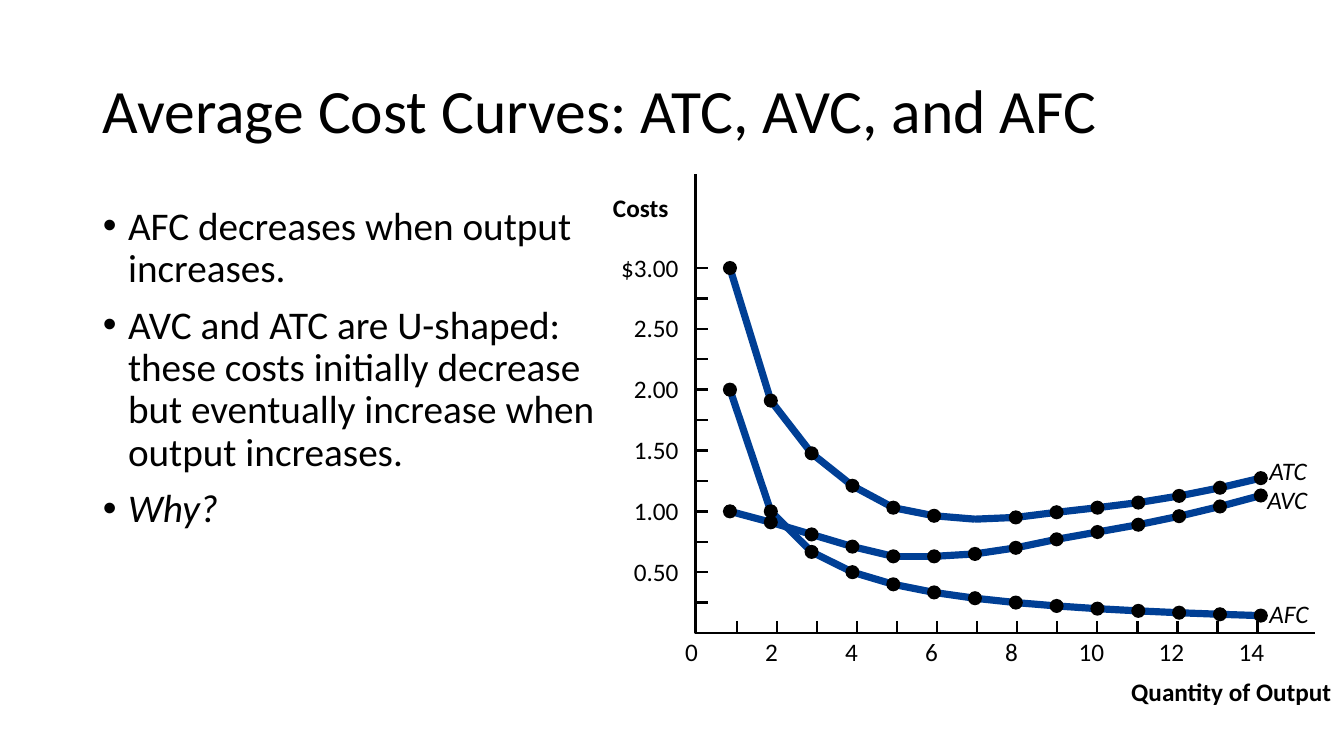
from itertools import pairwise

from lxml import etree
from pptx import Presentation
from pptx.dml.color import RGBColor
from pptx.enum.shapes import MSO_CONNECTOR, MSO_SHAPE
from pptx.enum.text import MSO_ANCHOR, MSO_AUTO_SIZE, PP_ALIGN
from pptx.oxml.ns import qn
from pptx.util import Inches, Pt

STRAIGHT = MSO_CONNECTOR.STRAIGHT
OVAL = MSO_SHAPE.OVAL
MIDDLE, TOP = MSO_ANCHOR.MIDDLE, MSO_ANCHOR.TOP
NO_FIT, GROW = MSO_AUTO_SIZE.NONE, MSO_AUTO_SIZE.SHAPE_TO_FIT_TEXT
LEFT, CENTER, RIGHT = PP_ALIGN.LEFT, PP_ALIGN.CENTER, PP_ALIGN.RIGHT

FONT = "Calibri"
BLACK, BLUE = "000000", "003F95"
TITLE = "Average Cost Curves: ATC, AVC, and AFC"
POINTS = [
    "AFC decreases when output increases.",
    "AVC and ATC are U-shaped: these costs initially decrease "
    "but eventually increase when output increases.",
    "Why?",
]
AFC = [2 / n for n in range(1, 15)]
AVC = [1, 0.91, 0.81, 0.71, 0.63, 0.63, 0.65, 0.7, 0.77, 0.83, 0.89, 0.96, 1.04, 1.13]
ATC = [fixed + varied for fixed, varied in zip(AFC, AVC)]


def color(code):
    """Turn a hex string into a colour."""
    return RGBColor.from_string(code)


def style(para, size, bold=False, italic=False):
    """Format every run of a paragraph."""
    for run in para.runs:
        font = run.font
        font.name, font.size = FONT, Pt(size)
        font.bold, font.italic = bold, italic
        font.color.rgb = color(BLACK)


def place(shape, box):
    """Move a shape to a box given in inches."""
    shape.left, shape.top, shape.width, shape.height = map(Inches, box)


def line(shapes, start, end, code=BLACK, width=1.75):
    """Draw a straight line without a shadow."""
    stroke = shapes.add_connector(STRAIGHT, *map(Inches, (*start, *end)))
    stroke.line.color.rgb = color(code)
    stroke.line.width = Pt(width)
    etree.SubElement(stroke._element.spPr, qn("a:effectLst"))


def dot(shapes, x, y, size=0.14):
    """Draw a black dot centred on a point."""
    mark = shapes.add_shape(OVAL, *map(Inches, (x - size / 2, y - size / 2, size, size)))
    mark.shadow.inherit = False
    mark.fill.solid()
    mark.fill.fore_color.rgb = color(BLACK)
    mark.line.fill.background()


def label(slide, text, x, y, width, align=LEFT, bold=False, italic=False):
    """Write one line of text in a box that grows with it."""
    frame = slide.shapes.add_textbox(*map(Inches, (x, y, width, 0.3))).text_frame
    frame.margin_left = frame.margin_right = frame.margin_top = frame.margin_bottom = 0
    frame.word_wrap = False
    frame.auto_size = GROW
    frame.text = text
    para = frame.paragraphs[0]
    para.alignment = align
    style(para, 18, bold, italic)


def head(slide, box):
    """Fill the title."""
    title = slide.shapes.title
    place(title, box)
    frame = title.text_frame
    frame.text = TITLE
    frame.auto_size = NO_FIT
    frame.vertical_anchor = MIDDLE
    para = frame.paragraphs[0]
    para.alignment, para.line_spacing = LEFT, 0.9
    style(para, 44)


def notes(slide, box):
    """Fill the bullet list."""
    body = slide.placeholders[1]
    place(body, box)
    frame = body.text_frame
    frame.text = "\n".join(POINTS)
    frame.auto_size = NO_FIT
    frame.vertical_anchor = TOP
    for para in frame.paragraphs:
        para.line_spacing, para.space_before = 0.9, Pt(10)
        props = para._p.get_or_add_pPr()
        props.set("marL", str(Inches(0.25)))
        props.set("indent", str(-Inches(0.25)))
        style(para, 28, italic=para.text == "Why?")


def axes(slide, box, unit):
    """Draw the two axes with their ticks and labels."""
    left, top, width, height = box
    base = top + height
    pen = slide.shapes.build_freeform(Inches(left), Inches(top))
    pen.add_line_segments(
        [(Inches(left), Inches(base)), (Inches(left + width), Inches(base))], close=False)
    frame = pen.convert_to_shape()
    frame.shadow.inherit = False
    frame.fill.background()
    frame.line.color.rgb = color(BLACK)
    frame.line.width = Pt(1.75)

    for step in range(1, 13):
        y = base - step * unit / 4
        line(slide.shapes, (left, y), (left + 0.12, y))
    for step in range(14):
        x = left + 0.41 + step * 0.397
        line(slide.shapes, (x, base - 0.12), (x, base))

    for half in range(1, 7):
        text = f"{half / 2:.2f}"
        text, size = ("$" + text, 0.58) if half == 6 else (text, 0.45)
        label(slide, text, left - 0.17 - size, base - half * unit / 2 - 0.16, size, RIGHT)
    for step in range(8):
        text = str(step * 2)
        size = 0.13 * len(text)
        x = left - 0.04 + step * 0.793 - size / 2
        label(slide, text, x, base + 0.03, size, CENTER)
    label(slide, "Costs", left - 0.82, top + 0.18, 0.55, bold=True)
    label(slide, "Quantity of Output", left + 4.32, base + 0.43, 2, bold=True)


def curves(slide, box, unit):
    """Plot the three cost curves with dots and names."""
    left, top, _, height = box
    base = top + height
    paths = [[(left + 0.34 + n * 0.405, base - cost * unit) for n, cost in enumerate(costs)]
             for costs in (ATC, AVC, AFC)]
    for path in paths:
        group = slide.shapes.add_group_shape()
        for start, end in pairwise(path):
            line(group.shapes, start, end, BLUE, 5.13)
    for row, path in enumerate(paths):
        group = slide.shapes.add_group_shape()
        for n, (x, y) in enumerate(path):
            if (row, n) != (0, 6):
                dot(group.shapes, x, y)
    for text, x, y in (("ATC", 5.69, 2.79), ("AVC", 5.67, 3.07), ("AFC", 5.69, 4.21)):
        label(slide, text, left + x, top + y, 0.4, italic=True)


def main():
    """Build and save the slide."""
    deck = Presentation()
    deck.slide_width, deck.slide_height = Inches(13.33), Inches(7.5)
    slide = deck.slides.add_slide(deck.slide_layouts[1])
    head(slide, (0.92, 0.4, 11.5, 1.45))
    notes(slide, (0.92, 2, 5.17, 4.76))
    plot, unit = (6.9, 1.73, 6.14, 4.55), 1.207
    axes(slide, plot, unit)
    curves(slide, plot, unit)
    deck.save("out.pptx")


if __name__ == "__main__":
    main()
